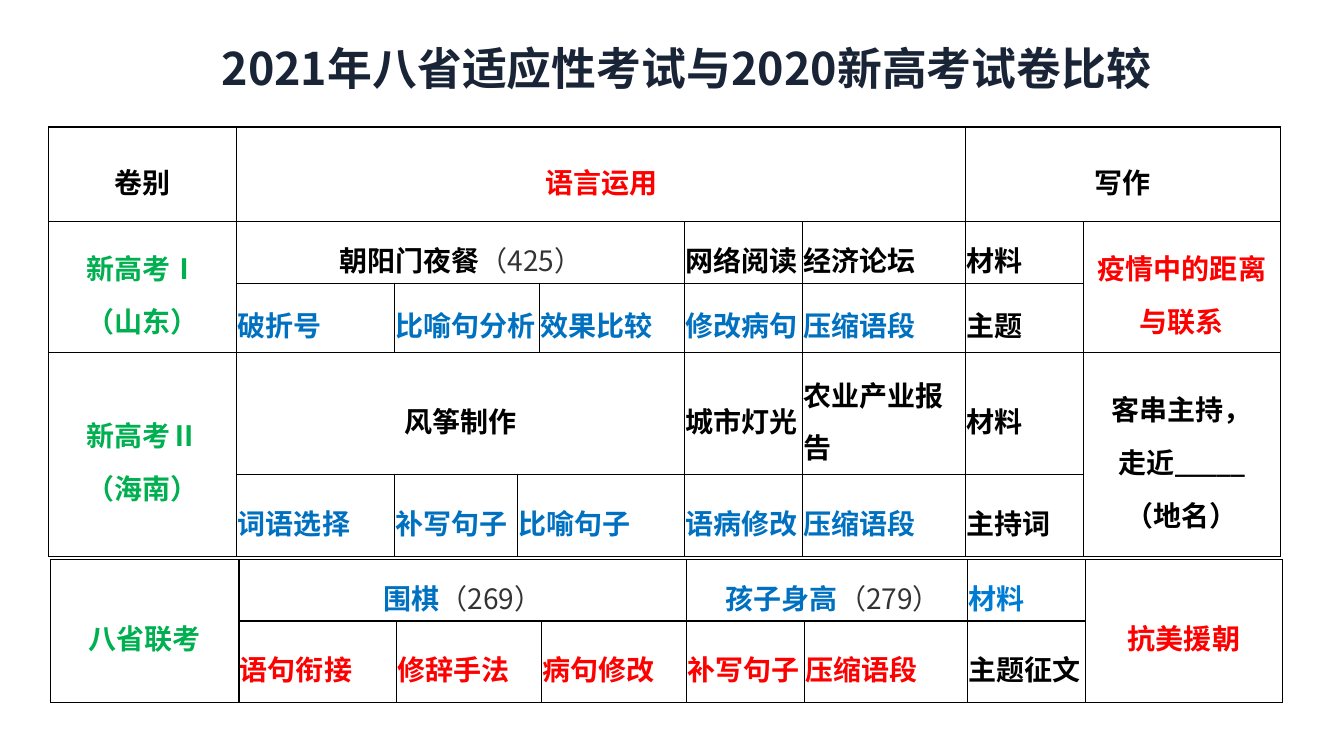
from dataclasses import dataclass

import pptx
import pptx.dml.color
import pptx.enum.text
import pptx.oxml
import pptx.oxml.ns
import pptx.util

Inches, Pt = pptx.util.Inches, pptx.util.Pt
ALIGN = pptx.enum.text.PP_ALIGN
ANCHOR = pptx.enum.text.MSO_ANCHOR

LATIN, CJK = "Calibri", "Noto Sans CJK SC"
BLACK, RED, BLUE, GREEN = "000000", "FF0000", "0070C0", "00B050"
GREY, NAVY, BRIGHT, WHITE = "333333", "192437", "007BD3", "FFFFFF"


@dataclass
class Cell:
    row: int
    col: int
    text: str
    color: str = BLACK
    rows: int = 1
    cols: int = 1
    centered: bool = False
    count: str = ""
    indent: float = 0


def rgb(color: str) -> pptx.dml.color.RGBColor:
    return pptx.dml.color.RGBColor.from_string(color)


def add_run(p, text: str, *, size: float = 20, color: str = BLACK,
            bold: bool = True, font: str = LATIN) -> None:
    r = p.add_run()
    r.text = text
    r.font.size, r.font.bold, r.font.name = Pt(size), bold, font
    r.font.color.rgb = rgb(color)
    ea = pptx.oxml.parse_xml(
        f'<a:ea {pptx.oxml.ns.nsdecls("a")} typeface="{CJK}"/>')
    r.font._element.append(ea)


def style_cell(cell) -> None:
    """Black one-point borders, white fill, narrow margins."""
    tc_pr = cell._tc.get_or_add_tcPr()
    for side in ("lnL", "lnR", "lnT", "lnB"):
        tc_pr.append(pptx.oxml.parse_xml(
            f'<a:{side} {pptx.oxml.ns.nsdecls("a")} w="{Pt(1)}">'
            f'<a:solidFill><a:srgbClr val="{BLACK}"/></a:solidFill></a:{side}>'))
    cell.fill.solid()
    cell.fill.fore_color.rgb = rgb(WHITE)
    cell.margin_left = cell.margin_right = cell.margin_top = Inches(0.01)
    cell.margin_bottom = 0
    cell.vertical_anchor = ANCHOR.MIDDLE


def fill_cell(table, item: Cell) -> None:
    cell = table.cell(item.row, item.col)
    if item.rows > 1 or item.cols > 1:
        cell.merge(table.cell(item.row + item.rows - 1, item.col + item.cols - 1))
    tf = cell.text_frame
    for i, line in enumerate(item.text.split("\n")):
        p = tf.add_paragraph() if i else tf.paragraphs[0]
        p.line_spacing = 1.3
        p.alignment = ALIGN.CENTER if item.centered else ALIGN.LEFT
        if item.indent:
            p._p.get_or_add_pPr().set("marL", str(Inches(item.indent)))
        add_run(p, line, color=item.color)
        if item.count:
            add_run(p, item.count, color=GREY, bold=False, font=CJK)


def add_grid(slide, left: float, top: float, widths: list[float],
             heights: list[float], items: list[Cell]) -> None:
    table = slide.shapes.add_table(
        len(heights), len(widths), Inches(left), Inches(top),
        Inches(sum(widths)), Inches(sum(heights))).table
    table.first_row = table.horz_banding = False
    for column, width in zip(table.columns, widths):
        column.width = Inches(width)
    for row, height in zip(table.rows, heights):
        row.height = Inches(height)
    for cell in table.iter_cells():
        style_cell(cell)
    for item in items:
        fill_cell(table, item)


def row_of(row: int, texts: dict[int, str], color: str) -> list[Cell]:
    """Plain left-aligned cells of one row, keyed by column."""
    return [Cell(row, col, text, color) for col, text in texts.items()]


EXAMS_2020 = [
    # Header
    Cell(0, 0, "卷别", centered=True),
    Cell(0, 1, "语言运用", RED, cols=6, centered=True),
    Cell(0, 7, "写作", cols=2, centered=True),
    # Shandong
    Cell(1, 0, "新高考Ⅰ\n（山东）", GREEN, rows=2, centered=True),
    Cell(1, 1, "朝阳门夜餐", cols=4, centered=True, count="（425）"),
    *row_of(1, {5: "网络阅读", 6: "经济论坛", 7: "材料"}, BLACK),
    Cell(1, 8, "疫情中的距离与联系", RED, rows=2, centered=True),
    Cell(2, 2, "比喻句分析", BLUE, cols=2),
    *row_of(2, {1: "破折号", 4: "效果比较", 5: "修改病句", 6: "压缩语段"}, BLUE),
    Cell(2, 7, "主题"),
    # Hainan
    Cell(3, 0, "新高考Ⅱ\n（海南）", GREEN, rows=2, centered=True),
    Cell(3, 1, "风筝制作", cols=4, centered=True),
    *row_of(3, {5: "城市灯光", 6: "农业产业报告", 7: "材料"}, BLACK),
    Cell(3, 8, "客串主持，\n走近_____\n（地名）", rows=2, centered=True),
    Cell(4, 3, "比喻句子", BLUE, cols=2),
    *row_of(4, {1: "词语选择", 2: "补写句子", 5: "语病修改", 6: "压缩语段"}, BLUE),
    Cell(4, 7, "主持词"),
]

EIGHT_PROVINCES = [
    Cell(0, 0, "八省联考", GREEN, rows=2, centered=True),
    Cell(0, 1, "围棋", BLUE, cols=3, centered=True, count="（269）"),
    Cell(0, 4, "孩子身高", BLUE, cols=2, count="（279）", indent=0.38),
    Cell(0, 6, "材料", BRIGHT),
    Cell(0, 7, "抗美援朝", RED, rows=2, centered=True),
    *row_of(1, {1: "语句衔接", 2: "修辞手法", 3: "病句修改",
                4: "补写句子", 5: "压缩语段"}, RED),
    Cell(1, 6, "主题征文"),
]


def main() -> None:
    prs = pptx.Presentation()
    prs.slide_width, prs.slide_height = Inches(13.33), Inches(7.5)
    slide = prs.slides.add_slide(prs.slide_layouts[6])

    # Title
    sp = slide.shapes.add_textbox(Inches(2.1), Inches(0.36), Inches(9.95), Inches(0.64))
    tf = sp.text_frame
    tf.word_wrap = True
    tf.auto_size = pptx.enum.text.MSO_AUTO_SIZE.SHAPE_TO_FIT_TEXT
    add_run(tf.paragraphs[0], "2021年八省适应性考试与2020新高考试卷比较",
            size=32, color=NAVY, font=CJK)

    # Comparison tables
    add_grid(slide, 0.48, 1.26, [1.87, 1.56, 1.22, 0.22, 1.44, 1.17, 1.62, 1.17, 1.95],
             [0.94, 0.61, 0.69, 1.21, 0.81], EXAMS_2020)
    add_grid(slide, 0.5, 5.55, [1.87, 1.56, 1.44, 1.44, 1.17, 1.62, 1.17, 1.95],
             [0.61, 0.81], EIGHT_PROVINCES)

    prs.save("out.pptx")


if __name__ == "__main__":
    main()
